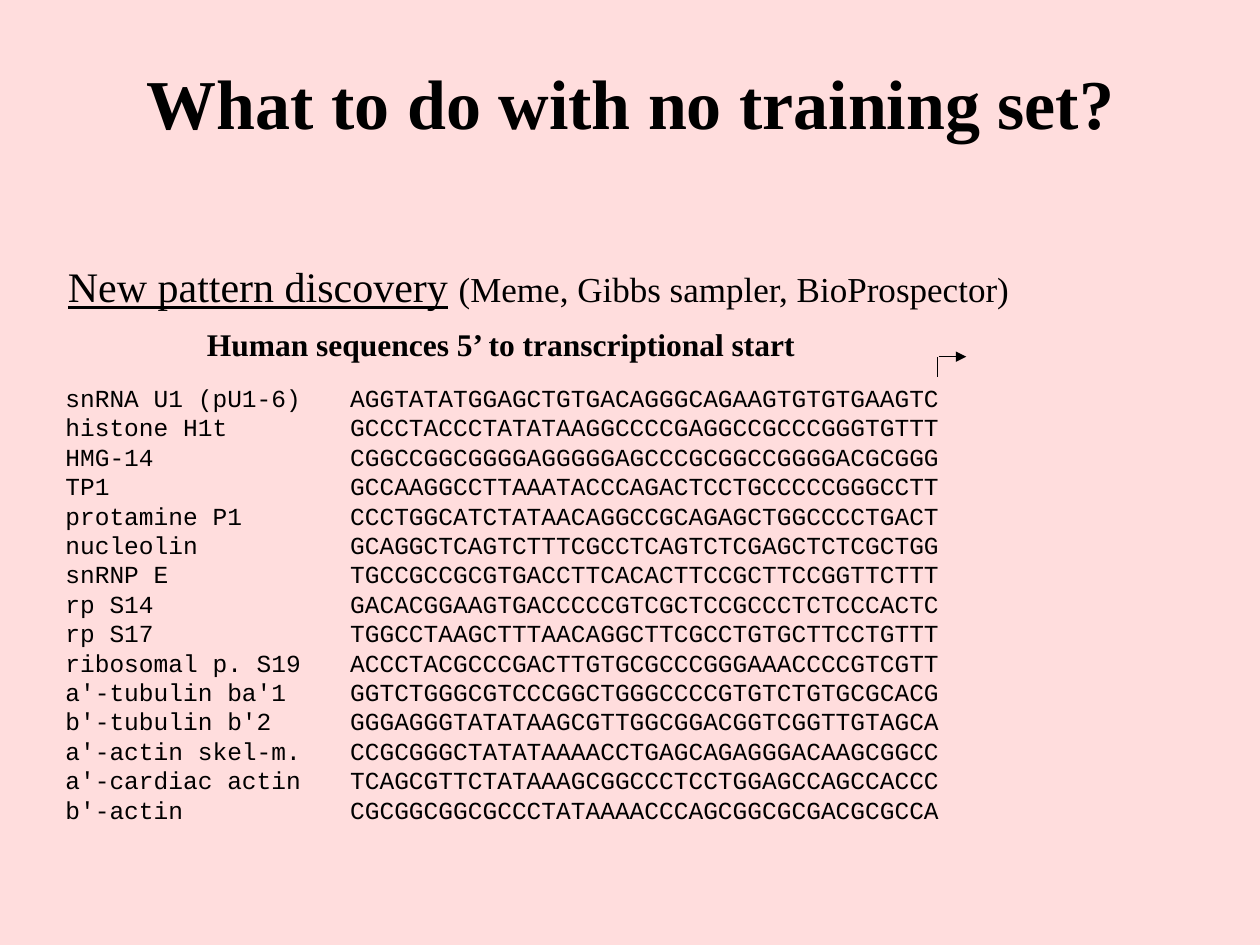
from dataclasses import dataclass

import lxml.etree
import pptx
import pptx.dml.color
import pptx.enum.shapes
import pptx.enum.text
import pptx.oxml.ns
import pptx.util
from pptx.util import Cm

COLORS = {"background": "FFDDDD", "ink": "000000"}
SERIF, MONO = "Times New Roman", "Courier New"
LEFT = pptx.enum.text.PP_ALIGN.LEFT
CENTER = pptx.enum.text.PP_ALIGN.CENTER


@dataclass
class Box:
    left: float
    top: float
    width: float
    height: float


@dataclass
class Promoter:
    gene: str
    sequence: str


PROMOTERS = [
    Promoter("snRNA U1 (pU1-6)", "AGGTATATGGAGCTGTGACAGGGCAGAAGTGTGTGAAGTC"),
    Promoter("histone H1t", "GCCCTACCCTATATAAGGCCCCGAGGCCGCCCGGGTGTTT"),
    Promoter("HMG-14", "CGGCCGGCGGGGAGGGGGAGCCCGCGGCCGGGGACGCGGG"),
    Promoter("TP1", "GCCAAGGCCTTAAATACCCAGACTCCTGCCCCCGGGCCTT"),
    Promoter("protamine P1", "CCCTGGCATCTATAACAGGCCGCAGAGCTGGCCCCTGACT"),
    Promoter("nucleolin", "GCAGGCTCAGTCTTTCGCCTCAGTCTCGAGCTCTCGCTGG"),
    Promoter("snRNP E", "TGCCGCCGCGTGACCTTCACACTTCCGCTTCCGGTTCTTT"),
    Promoter("rp S14", "GACACGGAAGTGACCCCCGTCGCTCCGCCCTCTCCCACTC"),
    Promoter("rp S17", "TGGCCTAAGCTTTAACAGGCTTCGCCTGTGCTTCCTGTTT"),
    Promoter("ribosomal p. S19", "ACCCTACGCCCGACTTGTGCGCCCGGGAAACCCCGTCGTT"),
    Promoter("a'-tubulin ba'1", "GGTCTGGGCGTCCCGGCTGGGCCCCGTGTCTGTGCGCACG"),
    Promoter("b'-tubulin b'2", "GGGAGGGTATATAAGCGTTGGCGGACGGTCGGTTGTAGCA"),
    Promoter("a'-actin skel-m.", "CCGCGGGCTATATAAAACCTGAGCAGAGGGACAAGCGGCC"),
    Promoter("a'-cardiac actin", "TCAGCGTTCTATAAAGCGGCCCTCCTGGAGCCAGCCACCC"),
    Promoter("b'-actin", "CGCGGCGGCGCCCTATAAAACCCAGCGGCGCGACGCGCCA"),
]


def rgb(name: str) -> pptx.dml.color.RGBColor:
    return pptx.dml.color.RGBColor.from_string(COLORS[name])


def add_xml(parent, tag: str, **attributes: str):
    return lxml.etree.SubElement(parent, pptx.oxml.ns.qn(tag), attributes)


def add_frame(shapes, box: Box):
    frame = shapes.add_textbox(
        Cm(box.left), Cm(box.top), Cm(box.width), Cm(box.height)).text_frame
    frame.word_wrap = True
    frame.auto_size = pptx.enum.text.MSO_AUTO_SIZE.SHAPE_TO_FIT_TEXT
    return frame


def style(paragraph, font_name: str, size: float, bold: bool = False, align=LEFT) -> None:
    paragraph.alignment = align
    font = paragraph.font
    font.name, font.size, font.bold = font_name, pptx.util.Pt(size), bold
    font.color.rgb = rgb("ink")


def add_heading(shapes, box: Box, text: str, size: float, bold: bool = True, align=CENTER):
    """Serif line with half a line of space before it."""
    paragraph = add_frame(shapes, box).paragraphs[0]
    paragraph.text = text
    style(paragraph, SERIF, size, bold, align)
    space_before = lxml.etree.Element(pptx.oxml.ns.qn("a:spcBef"))
    add_xml(space_before, "a:spcPct", val="50000")
    paragraph.font  # paragraph properties exist from here on
    paragraph._p.get_or_add_pPr().insert(0, space_before)
    return paragraph


def add_sequences(shapes, box: Box, tab: float) -> None:
    frame = add_frame(shapes, box)
    frame.margin_top = Cm(0.2)
    for index, promoter in enumerate(PROMOTERS):
        paragraph = frame.add_paragraph() if index else frame.paragraphs[0]
        paragraph.add_run().text = f"{promoter.gene}\t{promoter.sequence}"
        properties = paragraph._p.get_or_add_pPr()
        tabs = add_xml(properties, "a:tabLst")
        add_xml(tabs, "a:tab", pos=str(int(Cm(tab))), algn="l")
        style(paragraph, MONO, 14)
        paragraph.line_spacing = pptx.util.Pt(16.8)


def add_line(shapes, x1: float, y1: float, x2: float, y2: float, arrow: bool = False) -> None:
    line = shapes.add_connector(
        pptx.enum.shapes.MSO_CONNECTOR.STRAIGHT, Cm(x1), Cm(y1), Cm(x2), Cm(y2))
    line.line.color.rgb = rgb("ink")
    line.line.width = pptx.util.Pt(0.75)
    if arrow:
        add_xml(line.line._get_or_add_ln(), "a:tailEnd", type="triangle")
    add_xml(line._element.spPr, "a:effectLst")


def main() -> None:
    deck = pptx.Presentation()
    deck.slide_width, deck.slide_height = Cm(25.4), Cm(19.05)
    slide = deck.slides.add_slide(deck.slide_layouts[6])
    slide.background.fill.solid()
    slide.background.fill.fore_color.rgb = rgb("background")

    # Method line: underlined topic, then the programs in smaller type
    method = add_heading(slide.shapes, Box(1.12, 5.13, 20.17, 1.27),
                         "New pattern discovery", 24, bold=False, align=LEFT)
    method.runs[0].font.underline = True
    method.add_run().text = " "
    programs = method.add_run()
    programs.text = "(Meme, Gibbs sampler, BioProspector)"
    programs.font.size = pptx.util.Pt(20)

    # Sequence listing with its caption and transcription start arrow
    listing = slide.shapes.add_group_shape().shapes
    add_sequences(listing, Box(1.07, 7.52, 20.47, 9.12), tab=5.74)
    add_heading(listing, Box(1.4, 6.43, 17.4, 1.02),
                "Human sequences 5’ to transcriptional start", 18)
    add_line(listing, 18.9, 7.59, 18.9, 7.19)
    add_line(listing, 18.92, 7.19, 19.48, 7.19, arrow=True)

    # Title
    add_heading(slide.shapes, Box(2.34, 1.07, 20.75, 1.96),
                "What to do with no training set?", 40)

    deck.save("out.pptx")


if __name__ == "__main__":
    main()
